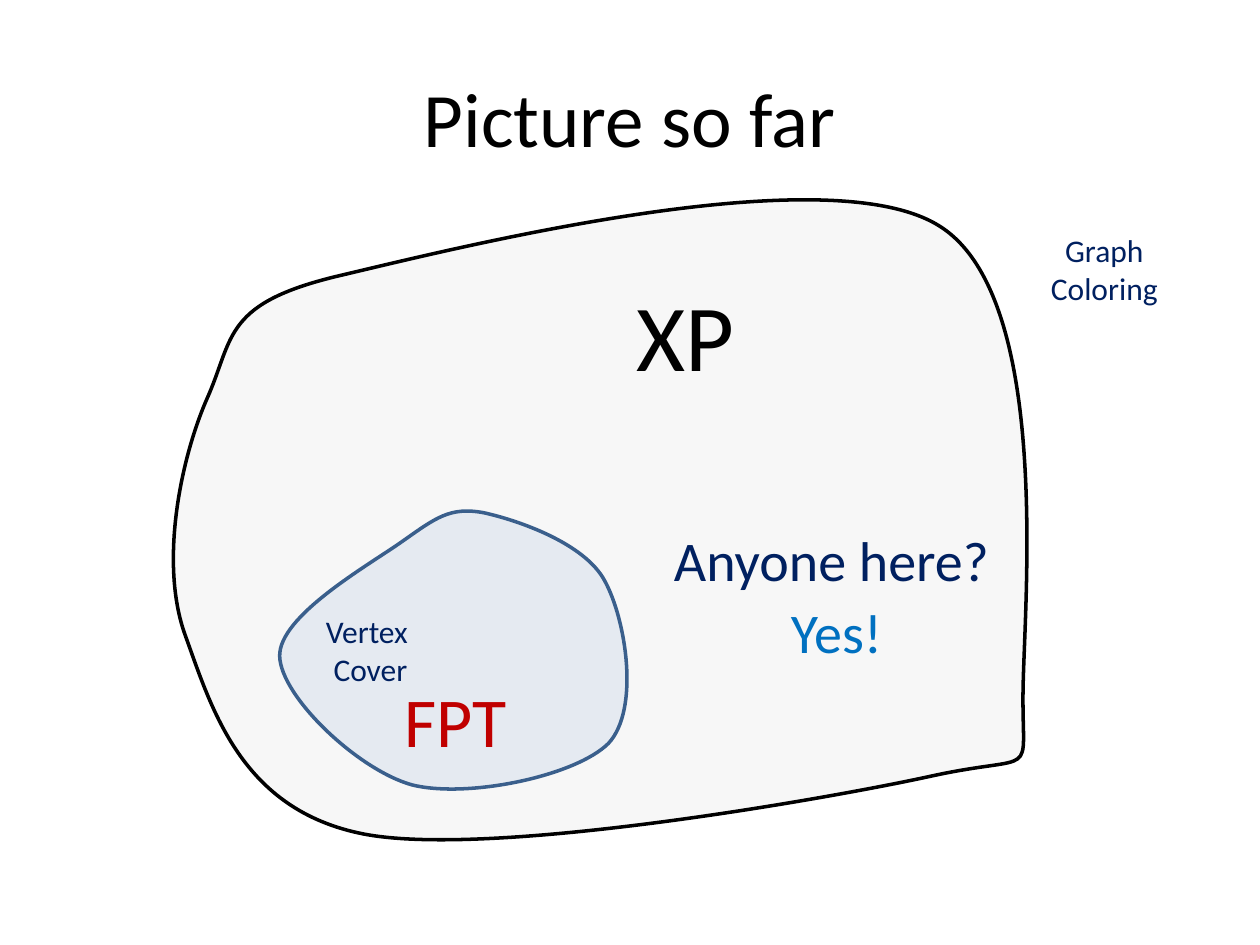
from dataclasses import dataclass

from lxml.etree import SubElement
from pptx import Presentation
from pptx.dml.color import RGBColor
from pptx.enum.text import MSO_ANCHOR as Anchor, MSO_AUTO_SIZE as AutoSize, PP_ALIGN as Align
from pptx.oxml.ns import qn
from pptx.util import Inches, Pt

# The slide is a grid of square cells, a tenth of an inch wide
COLUMNS, ROWS = 100, 75
CELL = Inches(0.1)

Point = tuple[float, float]
Curve = tuple[Point, Point, Point]
Bounds = tuple[float, float, float, float]


@dataclass
class Region:
    bounds: Bounds  # column, row, width, height
    start: Point
    curves: list[Curve]  # two control points and an end point each
    fill: str
    opacity: int  # percent
    line: str


@dataclass
class Label:
    text: str
    bounds: Bounds
    size: int
    color: str
    align: Align = Align.CENTER
    wrap: bool = False
    anchor: Anchor = Anchor.TOP


REGIONS = [
    # XP
    Region((13.8, 15.8, 67.7, 50.8), (73.9, 61.6), [
        ((65.2, 63.5), (38.8, 68.1), (28.9, 66.2)),
        ((19.1, 64.3), (16.8, 56.2), (14.7, 50.4)),
        ((12.6, 44.6), (14.4, 36.2), (16.5, 31.5)),
        ((18.6, 26.7), (17.7, 24), (27.3, 21.8)),
        ((37, 19.5), (65.6, 12.4), (74.5, 17.9)),
        ((83.5, 23.4), (81.3, 47.6), (81.2, 54.8)),
        ((81.1, 62.1), (82.6, 59.7), (73.9, 61.6)),
    ], "D9D9D9", 20, "000000"),
    # FPT
    Region((22.2, 40.6, 27.6, 22), (31.9, 43), [
        ((29.2, 44.9), (22.1, 48.9), (22.2, 52.1)),
        ((22.3, 55.3), (28.4, 61.1), (32.7, 62.3)),
        ((37.1, 63.4), (45.7, 61.6), (48.3, 59)),
        ((50.8, 56.3), (49.7, 49.2), (48, 46.1)),
        ((46.4, 43.1), (41.1, 41.3), (38.4, 40.7)),
        ((35.7, 40.2), (34.6, 41.1), (31.9, 43)),
    ], "4F81BD", 10, "3A5F8C"),
]

LABELS = [
    Label("Picture so far", (5, 3, 90, 12.5), 44, "000000", wrap=True, anchor=Anchor.MIDDLE),
    Label("FPT", (31.1, 53.25, 10.2, 7.7), 40, "C00000", align=Align.LEFT),
    Label("XP", (49.45, 21.5, 9.9, 10.1), 54, "000000"),
    Label("Vertex \nCover", (24.8, 48.1, 9.2, 7.1), 18, "002060"),
    Label("Graph\vColoring", (82.35, 17.85, 10.6, 7.1), 18, "002060"),
    Label("Anyone here?", (52.35, 41.2, 27.3, 6.4), 32, "002060"),
    Label("Yes!", (61.75, 46.9, 9.3, 6.4), 32, "0070C0"),
]


def cells(count: float) -> int:
    return round(count * CELL)


def rgb(color: str) -> RGBColor:
    return RGBColor.from_string(color)


def set_all(target: object, values: dict) -> None:
    for name, value in values.items():
        setattr(target, name, value)


def trace_curves(shape, region: Region) -> None:
    """Give the outline its Bezier curves, measured from the region's corner."""
    left, top, width, height = region.bounds
    track = next(shape._element.iter(qn("a:path")))
    for segment in list(track):
        track.remove(segment)
    track.set("w", str(cells(width)))
    track.set("h", str(cells(height)))
    segments = [("a:moveTo", (region.start,))]
    segments += [("a:cubicBezTo", curve) for curve in region.curves]
    for tag, points in segments:
        segment = SubElement(track, qn(tag))
        for x, y in points:
            point = SubElement(segment, qn("a:pt"))
            point.set("x", str(cells(x - left)))
            point.set("y", str(cells(y - top)))
    SubElement(track, qn("a:close"))


def draw_region(page, region: Region) -> None:
    outline = page.shapes.build_freeform(*map(cells, region.start))
    outline.add_line_segments([tuple(map(cells, curve[-1])) for curve in region.curves])
    shape = outline.convert_to_shape()
    set_all(shape, dict(zip(("left", "top", "width", "height"), map(cells, region.bounds))))
    trace_curves(shape, region)
    shape.shadow.inherit = False
    shape.fill.solid()
    shape.fill.fore_color.rgb = rgb(region.fill)
    shape.line.color.rgb = rgb(region.line)
    shape.line.width = Pt(2)
    # Transparency goes on the fill colour
    color = shape._element.spPr.find(qn("a:solidFill")).find(qn("a:srgbClr"))
    SubElement(color, qn("a:alpha")).set("val", str(region.opacity * 1000))


def draw_label(page, label: Label) -> None:
    box = page.shapes.add_textbox(*map(cells, label.bounds))
    frame = box.text_frame
    set_all(frame, {
        "text": label.text,
        "word_wrap": label.wrap,
        "vertical_anchor": label.anchor,
        "auto_size": AutoSize.NONE if label.wrap else AutoSize.SHAPE_TO_FIT_TEXT,
    })
    for para in frame.paragraphs:
        para.alignment = label.align
        for span in para.runs:
            set_all(span.font, {"name": "Calibri", "size": Pt(label.size)})
            span.font.color.rgb = rgb(label.color)


def main() -> None:
    deck = Presentation()
    set_all(deck, {"slide_width": cells(COLUMNS), "slide_height": cells(ROWS)})
    page = deck.slides.add_slide(deck.slide_layouts[6])
    for region in REGIONS:
        draw_region(page, region)
    for label in LABELS:
        draw_label(page, label)
    deck.save("out.pptx")


if __name__ == "__main__":
    main()
